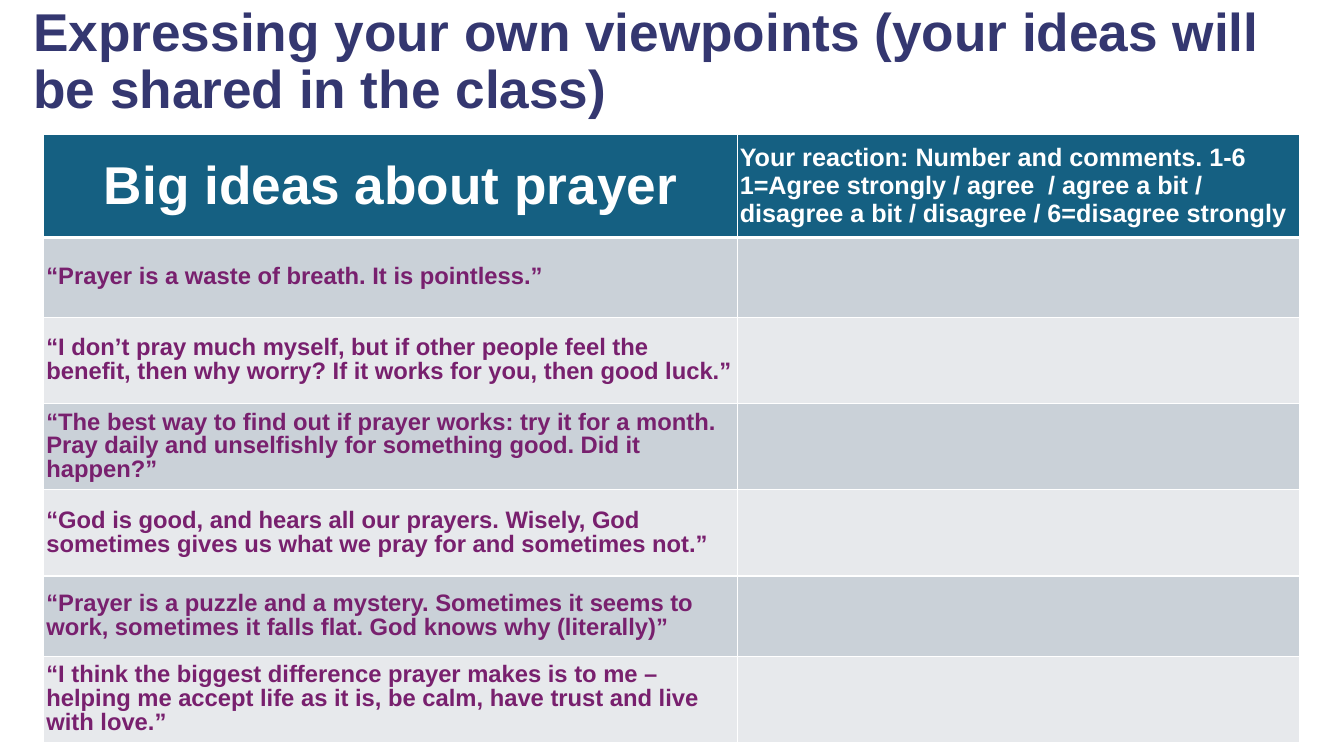
from lxml import etree
from pptx import Presentation
from pptx import util as u
from pptx.dml import color
from pptx.enum import text
from pptx.oxml import ns

COLORS = {
    "title": "343770",
    "header": "156082",
    "quote": "78206E",
    "band_dark": "CAD1D8",
    "band_light": "E7E9EC",
    "white": "FFFFFF",
}
HEADINGS = [
    ("Big ideas about prayer", 76, text.PP_ALIGN.CENTER),
    ("Your reaction: Number and comments. 1-6 1=Agree strongly / agree  / agree a bit / "
     "disagree a bit / disagree / 6=disagree strongly", 36, text.PP_ALIGN.LEFT),
]
QUOTES = [
    "“Prayer is a waste of breath. It is pointless.”",
    "“I don’t pray much myself, but if other people feel the benefit, then why worry? "
    "If it works for you, then good luck.”",
    "“The best way to find out if prayer works: try it for a month. Pray daily and "
    "unselfishly for something good. Did it happen?”",
    "“God is good, and hears all our prayers. Wisely, God sometimes gives us what we "
    "pray for and sometimes not.”",
    "“Prayer is a puzzle and a mystery. Sometimes it seems to work, sometimes it falls "
    "flat. God knows why (literally)”",
    "“I think the biggest difference prayer makes is to me – helping me accept life as "
    "it is, be calm, have trust and live with love.”",
]
COLUMN_WIDTHS = [13.76, 11.15]
ROW_HEIGHTS = [2.05, 1.59, 1.71, 1.71, 1.71, 1.59, 1.71]


def write_text(text_frame, content, size, color_name, spacing=None, alignment=None):
    text_frame.text = content
    paragraph = text_frame.paragraphs[0]
    paragraph.line_spacing = spacing
    paragraph.alignment = alignment
    font = paragraph.runs[0].font
    font.name = "Arial"
    font.size = u.Pt(size)
    font.bold = True
    font.color.rgb = color.RGBColor.from_string(COLORS[color_name])


def style_cell(cell, fill_name, widths):
    cell.vertical_anchor = text.MSO_ANCHOR.MIDDLE
    cell.margin_left = cell.margin_right = u.Inches(0.05)
    cell.margin_top = cell.margin_bottom = u.Inches(0.05)
    # Borders come before the fill in the cell properties
    properties = cell._tc.get_or_add_tcPr()
    for side, width in zip("LRTB", widths):
        line = etree.SubElement(properties, ns.qn(f"a:ln{side}"), w=str(u.Pt(width)))
        solid = etree.SubElement(line, ns.qn("a:solidFill"))
        etree.SubElement(solid, ns.qn("a:srgbClr"), val=COLORS["white"])
    cell.fill.solid()
    cell.fill.fore_color.rgb = color.RGBColor.from_string(COLORS[fill_name])


presentation = Presentation()
presentation.slide_width = u.Inches(26.67)
presentation.slide_height = u.Inches(15)
slide = presentation.slides.add_slide(presentation.slide_layouts[5])

# Title
title = slide.shapes.title
title.left, title.top = u.Inches(0.56), u.Inches(0)
title.width, title.height = u.Inches(25.52), u.Inches(2.49)
title_frame = title.text_frame
title_frame.word_wrap = True
title_frame.auto_size = text.MSO_AUTO_SIZE.NONE
title_frame.vertical_anchor = text.MSO_ANCHOR.MIDDLE
title_frame.margin_left = title_frame.margin_right = u.Inches(0.1)
title_frame.margin_top = title_frame.margin_bottom = u.Inches(0.1)
write_text(title_frame,
           "Expressing your own viewpoints (your ideas will be shared in the class)",
           76, "title", 0.9, text.PP_ALIGN.LEFT)

# Table grid
table = slide.shapes.add_table(
    len(ROW_HEIGHTS), len(COLUMN_WIDTHS), u.Inches(0.87), u.Inches(2.66),
    u.Inches(sum(COLUMN_WIDTHS)), u.Inches(sum(ROW_HEIGHTS))).table
for column, width in zip(table.columns, COLUMN_WIDTHS):
    column.width = u.Inches(width)
for row, height in zip(table.rows, ROW_HEIGHTS):
    row.height = u.Inches(height)

# Header row, with a thick rule below it
for column_index, (heading, size, alignment) in enumerate(HEADINGS):
    cell = table.cell(0, column_index)
    style_cell(cell, "header", (2, 2, 2, 6))
    write_text(cell.text_frame, heading, size, "white", alignment=alignment)

# Quotes, each with an empty cell for the reaction
for row_index, quote in enumerate(QUOTES, start=1):
    band = "band_dark" if row_index % 2 else "band_light"
    for column_index in range(len(COLUMN_WIDTHS)):
        top = 6 if row_index == 1 else 2
        style_cell(table.cell(row_index, column_index), band, (2, 2, top, 2))
    write_text(table.cell(row_index, 0).text_frame, quote, 34, "quote", 0.9)

presentation.save("out.pptx")
